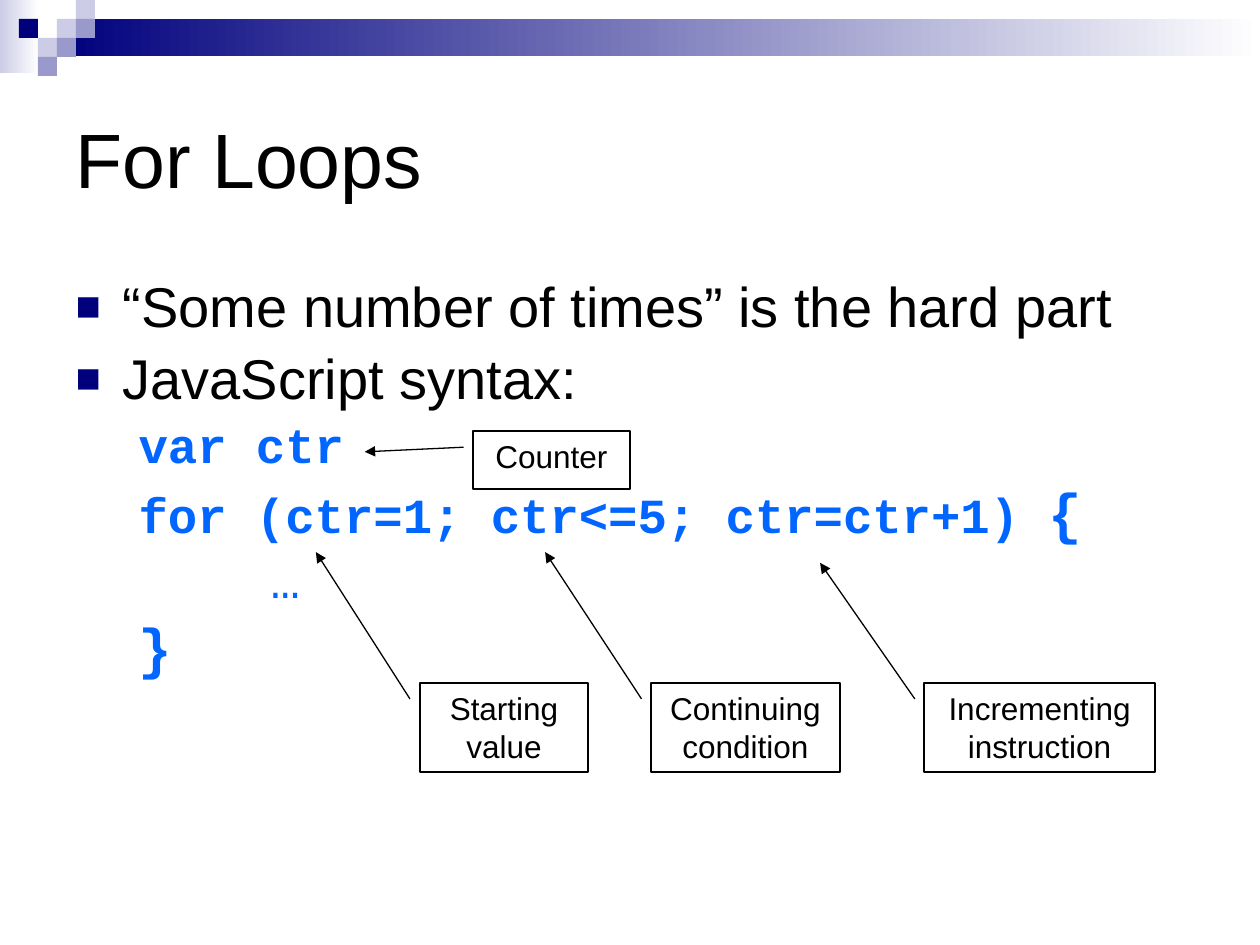
from lxml.etree import SubElement
from pptx import Presentation
from pptx.dml.color import RGBColor
from pptx.enum.shapes import MSO_SHAPE as Shape
from pptx.enum.text import MSO_ANCHOR as Anchor, MSO_AUTO_SIZE as AutoSize, PP_ALIGN as Align
from pptx.oxml.ns import qn
from pptx.util import Emu, Pt

PX_PER_INCH = 126
COLORS = {
    "navy": "00007D", "lilac": "CCCCE6", "violet": "9999CC",
    "white": "FFFFFF", "black": "000000", "code": "0066FF",
}


def px(length):
    return Emu(round(length * 914400 / PX_PER_INCH))


def rgb(name):
    return RGBColor.from_string(COLORS[name])


def place(shape, box):
    shape.left, shape.top, shape.width, shape.height = map(px, box)


def style_font(font, size, color="black", name="Arial", bold=False):
    font.size, font.name, font.bold = Pt(size), name, bold
    font.color.rgb = rgb(color)


def add_block(page, box, color, fade=False):
    block = page.shapes.add_shape(Shape.RECTANGLE, *map(px, box))
    block.shadow.inherit = False
    block.line.fill.background()
    if fade:
        block.fill.gradient()
        block.fill.gradient_angle = 0
        for stop, name in zip(block.fill.gradient_stops, (color, "white")):
            stop.color.rgb = rgb(name)
    else:
        block.fill.solid()
        block.fill.fore_color.rgb = rgb(color)


def add_banner(page, box):
    left, top, width, height = box
    cell = 19
    add_block(page, (left, top, 39, height), "lilac", fade=True)
    add_block(page, (left + 3 * cell, top + cell, width - 3 * cell, 2 * cell - 1), "navy", fade=True)
    tiles = [
        (3, 1, "lilac"), (4, 0, "lilac"), (4, 1, "violet"), (2, 2, "lilac"),
        (1, 1, "navy"), (3, 2, "violet"), (2, 3, "violet"),
    ]
    for column, row, color in tiles:
        add_block(page, (left + column * cell, top + row * cell, cell, cell), color)


def fill_title(title, box, text):
    place(title, box)
    title.text_frame.text = text
    title.text_frame.vertical_anchor = Anchor.MIDDLE
    title.text_frame.auto_size = AutoSize.NONE
    para = title.text_frame.paragraphs[0]
    para.alignment = Align.LEFT
    style_font(para.font, 44)


def set_layout(para, margin, indent, bullet=False):
    para.line_spacing = 0.9
    props = para._p.get_or_add_pPr()
    props.set("marL", str(px(margin)))
    props.set("indent", str(px(indent)))
    space = SubElement(props, qn("a:spcBef"))
    SubElement(space, qn("a:spcPct"), val="20000")
    if bullet:
        color = SubElement(props, qn("a:buClr"))
        SubElement(color, qn("a:srgbClr"), val=COLORS["navy"])
        SubElement(props, qn("a:buSzPct"), val="75000")
        SubElement(props, qn("a:buFont"), typeface="Arial")
        SubElement(props, qn("a:buChar"), char="■")
    else:
        SubElement(props, qn("a:buNone"))


def fill_body(body, box, bullets, code):
    place(body, box)
    frame = body.text_frame
    frame.auto_size = AutoSize.NONE
    frame.text = "\n".join(bullets + ["".join(text for text, size in line) for line in code])
    paras = frame.paragraphs
    for para in paras[:len(bullets)]:
        set_layout(para, 47, -47, bullet=True)
        style_font(para.font, 32)
    for para, line in zip(paras[len(bullets):], code):
        ellipsis = para.text == "…"
        para.level = 1
        set_layout(para, *((195, 0) if ellipsis else (102, -39)))
        style_font(para.font, 28, "code", "Courier New", bold=not ellipsis)
        para.clear()
        for text, size in line:
            span = para.add_run()
            span.text = text
            if size != 28:
                span.font.size = Pt(size)


def add_callout(page, box, text, tip):
    left, top, width, height = box
    callout = page.shapes.add_shape(Shape.LINE_CALLOUT_1, *map(px, box))
    points = ((left - 10, top + 16), tip)
    ratios = [ratio for x, y in points for ratio in ((y - top) / height, (x - left) / width)]
    for index, ratio in enumerate(ratios):
        callout.adjustments[index] = round(ratio, 2)
    callout.shadow.inherit = False
    callout.fill.background()
    callout.line.color.rgb = rgb("black")
    callout.line.width = Pt(0.75)
    SubElement(callout.line._get_or_add_ln(), qn("a:tailEnd"), type="triangle")
    frame = callout.text_frame
    frame.word_wrap = True
    frame.vertical_anchor = Anchor.TOP
    frame.text = text
    frame.paragraphs[0].alignment = Align.CENTER
    style_font(frame.paragraphs[0].font, 18)


def main():
    deck = Presentation()
    deck.slide_width, deck.slide_height = px(1260), px(945)
    page = deck.slides.add_slide(deck.slide_layouts[1])
    title, body = page.placeholders
    add_banner(page, (0, 0, 1260, 73))
    fill_title(title, (63, 63, 1134, 189), "For Loops")
    fill_body(
        body, (63, 273, 1134, 536),
        ["“Some number of times” is the hard part", "JavaScript syntax:"],
        [
            [("var ctr", 28)],
            [("for (ctr=1; ctr<=5; ctr=ctr+1) ", 28), ("{", 32)],
            [("…", 28)],
            [("}", 32)],
        ],
    )
    callouts = [
        ((420, 683, 168, 89), "Starting value", (315, 552)),
        ((473, 431, 157, 58), "Counter", (364, 452)),
        ((651, 683, 189, 89), "Continuing condition", (546, 552)),
        ((924, 683, 231, 89), "Incrementing instruction", (819, 563)),
    ]
    for box, text, tip in callouts:
        add_callout(page, box, text, tip)
    deck.save("out.pptx")


if __name__ == "__main__":
    main()
